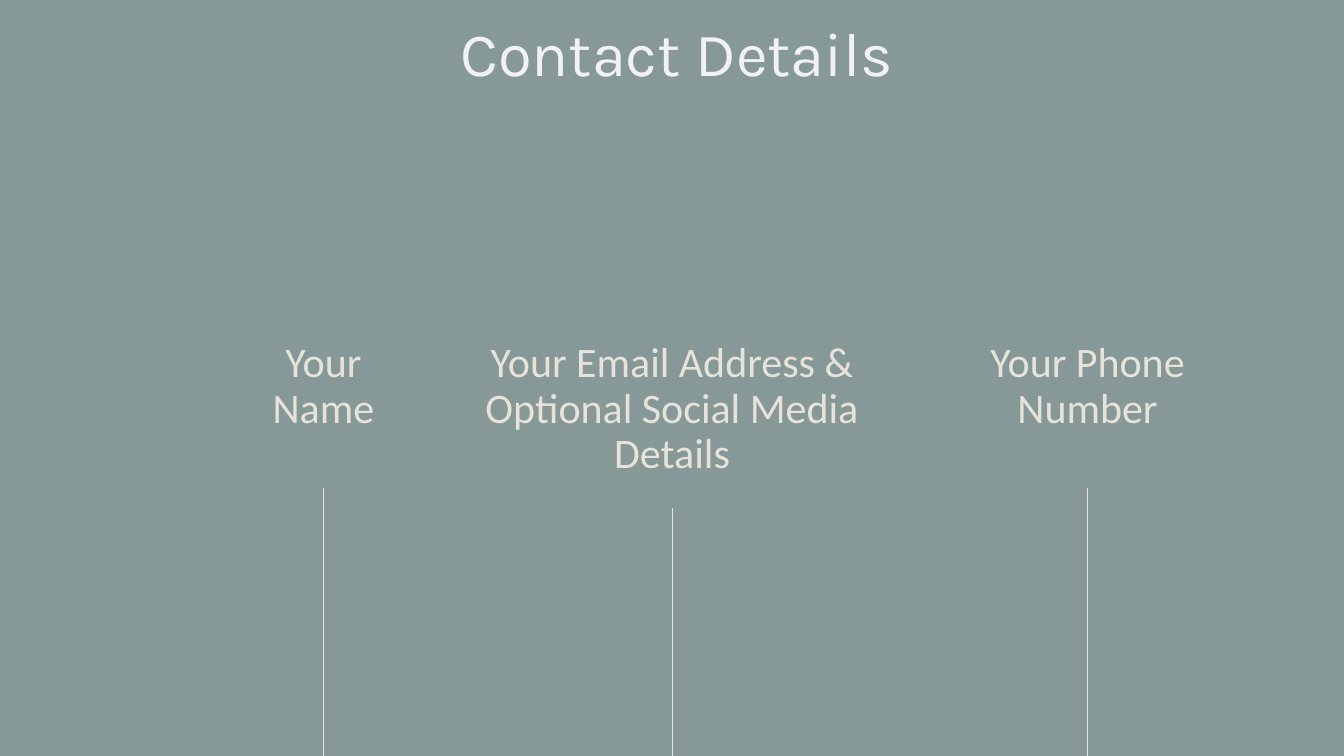
from pptx import Presentation
from pptx.dml.color import RGBColor
from pptx.enum.shapes import MSO_CONNECTOR
from pptx.enum.text import MSO_ANCHOR, PP_ALIGN
from pptx.oxml.ns import qn
from pptx.util import Pt
from lxml import etree

STRAIGHT = MSO_CONNECTOR.STRAIGHT
TOP, MIDDLE = MSO_ANCHOR.TOP, MSO_ANCHOR.MIDDLE
CENTER = PP_ALIGN.CENTER

SAGE, WHITE, CREAM = "869898", "F2F2F2", "E7E3D9"
LABEL_TOP = 240.5
STEM_BOTTOM = 603.4

# text, left, width, height, top of the stem below
CONTACTS = [
    ("Your Name", 160.8, 140.4, 29.5, 348.5),
    ("Your Email Address & Optional Social Media Details", 335, 290.2, 58.3, 363),
    ("Your Phone Number", 679.7, 194.4, 28.8, 348.5),
]


def color(value):
    return RGBColor.from_string(value)


class ContactSlide:
    """Holds the page and draws its elements in one style."""

    def __init__(self, deck):
        self.page = deck.slides.add_slide(deck.slide_layouts[6])
        fill = self.page.background.fill
        fill.solid()
        fill.fore_color.rgb = color(SAGE)

    def text(self, words, left, top, width, height, font, size, ink,
             anchor=TOP, before=0):
        box = self.page.shapes.add_textbox(
            Pt(left), Pt(top), Pt(width), Pt(height))
        frame = box.text_frame
        frame.word_wrap = True
        frame.vertical_anchor = anchor
        para = frame.paragraphs[0]
        para.alignment = CENTER
        para.line_spacing = 0.9
        para.space_before = Pt(before)
        span = para.add_run()
        span.text = words
        span.font.name = font
        span.font.size = Pt(size)
        span.font.color.rgb = color(ink)

    def stem(self, x, top, bottom):
        """Draws a thin vertical line."""
        line = self.page.shapes.add_connector(
            STRAIGHT, Pt(x), Pt(top), Pt(x), Pt(bottom))
        line.line.color.rgb = color(CREAM)
        line.line.width = Pt(0.5)
        properties = line._element.find(qn("p:spPr"))
        etree.SubElement(properties, qn("a:effectLst"))


def main():
    deck = Presentation()
    deck.slide_width, deck.slide_height = Pt(960), Pt(540)
    slide = ContactSlide(deck)
    slide.text("Contact Details", 301, 0, 365, 80.6, "Karla", 44, WHITE, MIDDLE)
    for words, left, width, height, stem_top in CONTACTS:
        slide.text(words, left, LABEL_TOP, width, height,
                   "Calibri", 30, CREAM, before=10)
        slide.stem(left + width / 2, stem_top, STEM_BOTTOM)
    deck.save("out.pptx")


if __name__ == "__main__":
    main()
